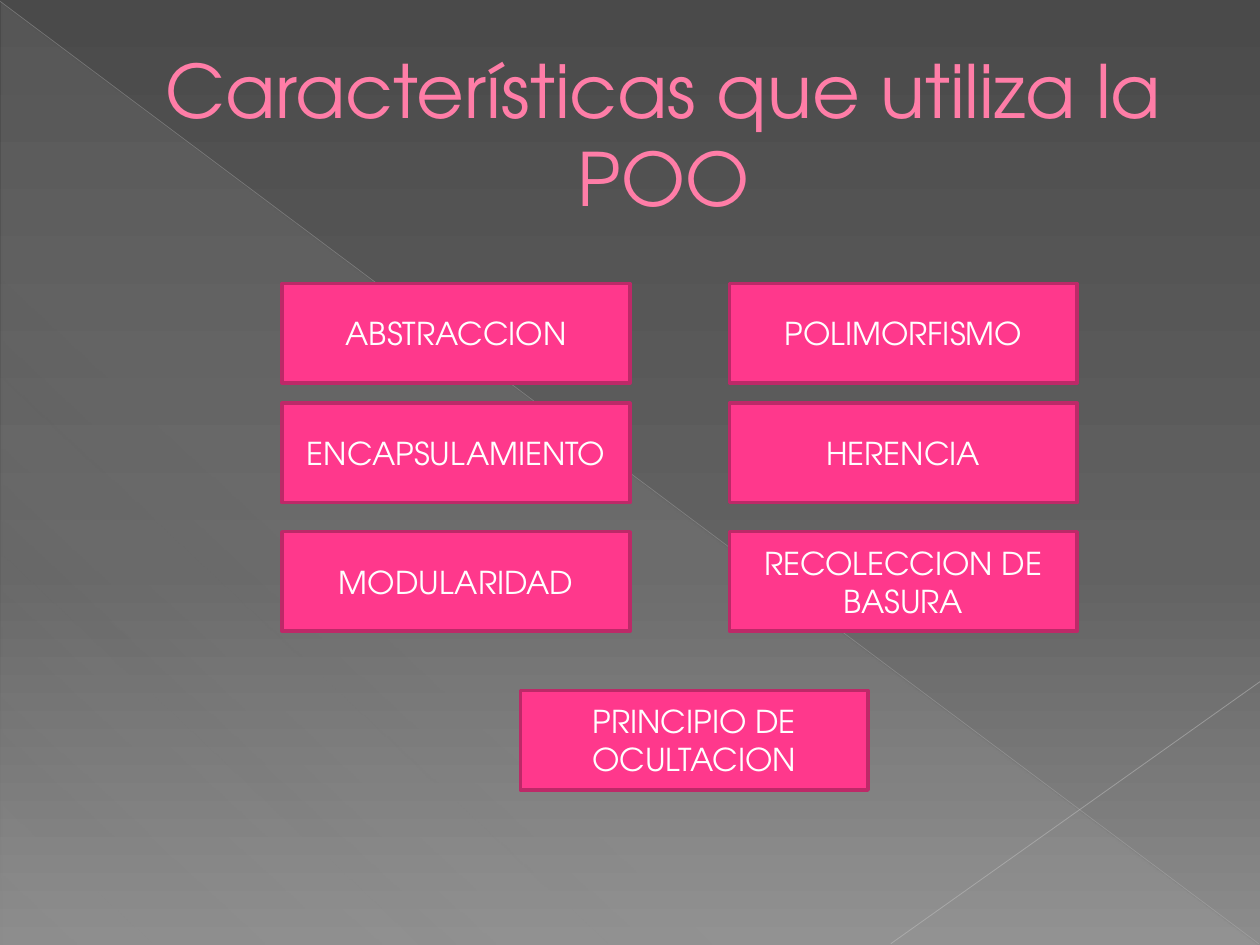
from lxml.etree import SubElement
from pptx import Presentation
from pptx.dml.color import RGBColor
from pptx.enum.shapes import MSO_CONNECTOR, MSO_SHAPE
from pptx.enum.text import MSO_ANCHOR, MSO_AUTO_SIZE, PP_ALIGN
from pptx.oxml.ns import qn
from pptx.util import Inches, Pt

# Content
TITLE = "Características que utiliza la POO"
LEFT_COLUMN, RIGHT_COLUMN, CENTRE_COLUMN = 2.24, 5.79, 4.13
ROWS = [
    (2.25, {LEFT_COLUMN: "ABSTRACCION", RIGHT_COLUMN: "POLIMORFISMO"}),
    (3.2, {LEFT_COLUMN: "ENCAPSULAMIENTO", RIGHT_COLUMN: "HERENCIA"}),
    (4.22, {LEFT_COLUMN: "MODULARIDAD", RIGHT_COLUMN: "RECOLECCION DE BASURA"}),
    (5.48, {CENTRE_COLUMN: "PRINCIPIO DE OCULTACION"}),
]

# Style: gradient stops are (position %, colour, opacity %)
FONT = "TeX Gyre Adventor"
BOX_SIZE = (2.76, 0.79)
BACKGROUND = [(0, "4A4A4A", 100), (60, "626262", 100), (100, "8C8C8C", 100)]
SHEEN = [(0, "D2D2D2", 10), (70, "D2D2D2", 8), (100, "D2D2D2", 1)]
# Decorative lines: start, end, colour, width, opacity %
LINES = [
    ((0, 0.01), (9.99, 7.49), "BFBFBF", 0.39, 35),
    ((10, 5.41), (7.07, 7.49), "C6C6C6", 0.47, 45),
]


def rgb(value):
    return RGBColor.from_string(value)


def inches(*values):
    return [Inches(value) for value in values]


def add_alpha(colour, opacity):
    SubElement(colour, qn("a:alpha"), val=str(opacity * 1000))


def set_gradient(fill, owner, stops, clockwise_angle):
    fill.gradient()
    fill.gradient_angle = 360 - clockwise_angle
    stop_list = next(owner.iter(qn("a:gsLst")))
    for old_stop in list(stop_list):
        stop_list.remove(old_stop)
    for position, value, opacity in stops:
        stop = SubElement(stop_list, qn("a:gs"), pos=str(position * 1000))
        add_alpha(SubElement(stop, qn("a:srgbClr"), val=value), opacity)


def write(frame, text, size, colour):
    frame.word_wrap = True
    frame.auto_size = MSO_AUTO_SIZE.NONE
    frame.vertical_anchor = MSO_ANCHOR.MIDDLE
    para = frame.paragraphs[0]
    para.text = text
    para.alignment = PP_ALIGN.CENTER
    para.font.name = FONT
    para.font.size = Pt(size)
    para.font.color.rgb = rgb(colour)
    return para


def add_box(page, left, top, text):
    box = page.shapes.add_shape(MSO_SHAPE.RECTANGLE, *inches(left, top, *BOX_SIZE))
    box.shadow.inherit = False
    box.fill.solid()
    box.fill.fore_color.rgb = rgb("FF388C")
    box.line.color.rgb = rgb("BD2968")
    box.line.width = Pt(2)
    write(box.text_frame, text, 18, "FFFFFF")


def add_line(page, start, end, colour, width, opacity):
    line = page.shapes.add_connector(MSO_CONNECTOR.STRAIGHT, *inches(*start, *end))
    line.line.color.rgb = rgb(colour)
    line.line.width = Pt(width)
    properties = line._element.spPr
    add_alpha(next(properties.iter(qn("a:srgbClr"))), opacity)
    SubElement(properties, qn("a:effectLst"))


def add_title(page):
    title = page.shapes.title
    title.left, title.top, title.width, title.height = inches(0.5, 0.29, 9, 1.53)
    para = write(title.text_frame, TITLE, 42, "FF7DA7")
    para._p.get_or_add_pPr().set("marL", str(Inches(0.53)))
    # Thin outline around the letters
    outline = SubElement(para.runs[0]._r.get_or_add_rPr(), qn("a:ln"), w=str(Pt(0.5)))
    SubElement(SubElement(outline, qn("a:solidFill")), qn("a:srgbClr"), val="B12761")


def main():
    deck = Presentation()
    deck.slide_width, deck.slide_height = inches(10, 7.5)
    page = deck.slides.add_slide(deck.slide_layouts[5])

    # Backdrop
    set_gradient(page.background.fill, page.element, BACKGROUND, 90)
    sheen = page.shapes.add_shape(MSO_SHAPE.RIGHT_TRIANGLE, *inches(0.01, 0.02, 9.98, 7.48))
    sheen.shadow.inherit = False
    sheen.line.fill.background()
    set_gradient(sheen.fill, sheen._element, SHEEN, 133)
    for line in LINES:
        add_line(page, *line)

    # Title and grid of characteristics
    add_title(page)
    for top, cells in ROWS:
        for left, text in cells.items():
            add_box(page, left, top, text)

    deck.save("out.pptx")


if __name__ == "__main__":
    main()
